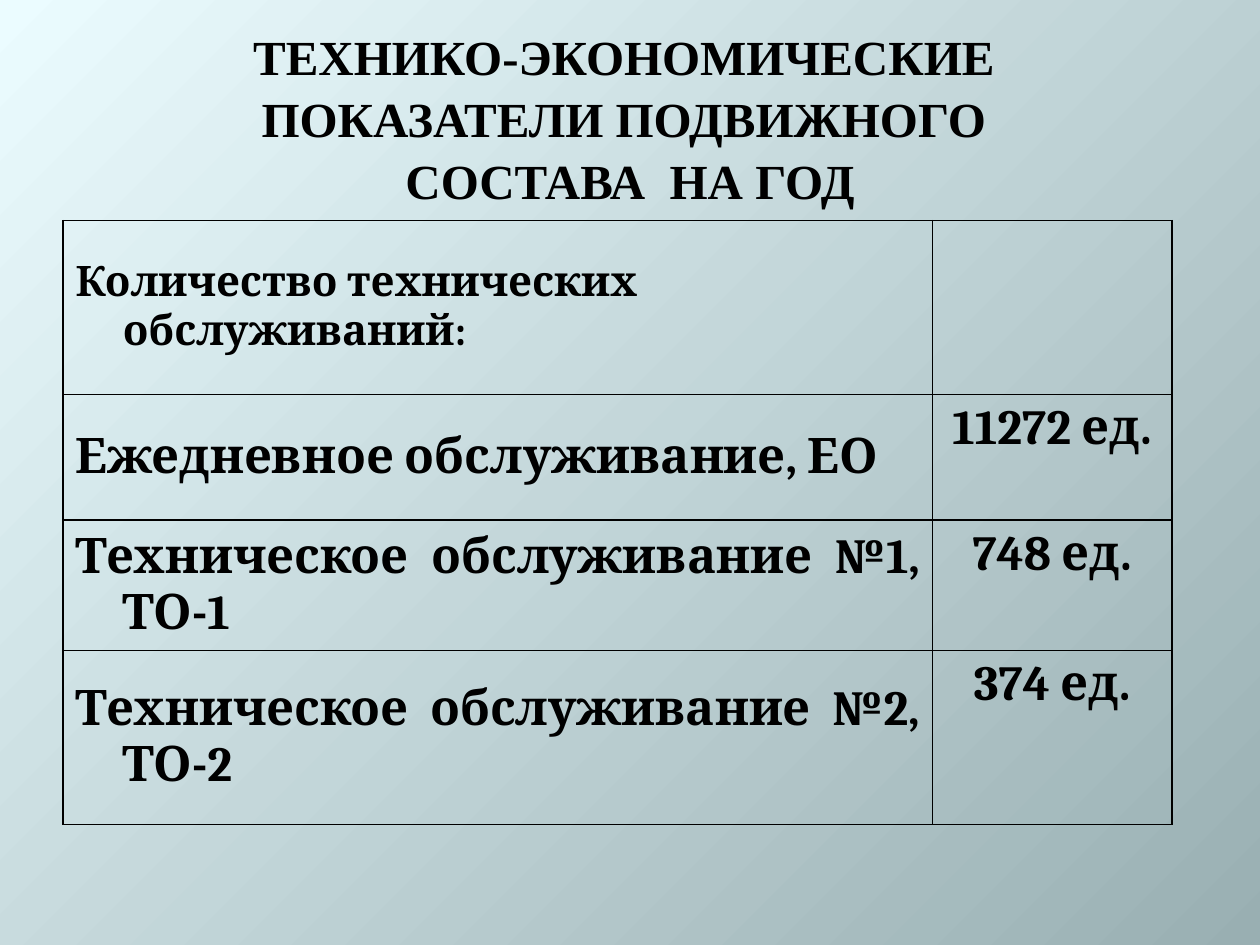
from dataclasses import dataclass

from lxml.etree import SubElement
from pptx import Presentation
from pptx.dml.color import RGBColor
from pptx.enum.text import MSO_ANCHOR, PP_ALIGN
from pptx.oxml.ns import qn
from pptx.util import Pt


@dataclass(frozen=True)
class Theme:
    light: str = "EBFCFF"
    dark: str = "99AFB2"
    ink: str = "000000"
    title_font: str = "Times New Roman"
    table_font: str = "Cambria"
    large: int = 28
    small: int = 24
    border: int = 1
    indent: int = 27


THEME = Theme()


def write_text(tf, text, font=THEME.table_font, size=THEME.large,
               align=PP_ALIGN.LEFT, hanging=0, line_spacing=None):
    """Write one bold paragraph; a vertical tab gives a line break."""
    p = tf.paragraphs[0]
    p.text = text
    p.alignment = align
    p.line_spacing = line_spacing
    if hanging:
        pPr = p._p.get_or_add_pPr()
        pPr.set("marL", str(Pt(hanging)))
        pPr.set("indent", str(-Pt(hanging)))
    for r in p.runs:
        r.font.name = font
        r.font.size = Pt(size)
        r.font.bold = True
        r.font.color.rgb = RGBColor.from_string(THEME.ink)


def set_borders(cell):
    tcPr = cell._tc.get_or_add_tcPr()
    for i, side in enumerate(("lnL", "lnR", "lnT", "lnB")):
        ln = SubElement(tcPr, qn(f"a:{side}"), w=str(Pt(THEME.border)))
        fill = SubElement(ln, qn("a:solidFill"))
        SubElement(fill, qn("a:srgbClr"), val=THEME.ink)
        tcPr.insert(i, ln)


def paint_background(s):
    fill = s.background.fill
    fill.gradient()
    fill.gradient_angle = 315
    for stop, color in zip(fill.gradient_stops, (THEME.light, THEME.dark)):
        stop.color.rgb = RGBColor.from_string(color)


def add_title(s, left, top, width, height):
    tf = s.shapes.add_textbox(Pt(left), Pt(top), Pt(width), Pt(height)).text_frame
    tf.word_wrap = True
    tf.vertical_anchor = MSO_ANCHOR.MIDDLE
    lines = ("ТЕХНИКО-ЭКОНОМИЧЕСКИЕ ", "ПОКАЗАТЕЛИ ПОДВИЖНОГО ", "СОСТАВА  НА ГОД")
    write_text(tf, "\v".join(lines), font=THEME.title_font,
               align=PP_ALIGN.CENTER, line_spacing=1.05)


def add_service_table(s, left, top, width, height):
    # Label, value, share of the height
    rows = (
        ("Количество технических обслуживаний:", "", 0.29),
        ("Ежедневное обслуживание, ЕО", "11272 ед.", 0.21),
        ("Техническое обслуживание №1, ТО-1", "748 ед.", 0.21),
        ("Техническое обслуживание №2, ТО-2", "374 ед.", 0.29),
    )
    value_width = 136.8
    table = s.shapes.add_table(len(rows), 2, Pt(left), Pt(top),
                               Pt(width), Pt(height)).table
    table.first_row = table.horz_banding = False
    table.columns[0].width = Pt(width - value_width)
    table.columns[1].width = Pt(value_width)

    for i, (label, value, share) in enumerate(rows):
        table.rows[i].height = Pt(height * share)
        label_cell, value_cell = table.cell(i, 0), table.cell(i, 1)
        for cell in (label_cell, value_cell):
            cell.fill.background()
            set_borders(cell)
        label_cell.vertical_anchor = MSO_ANCHOR.MIDDLE
        heading = i == 0
        write_text(label_cell.text_frame, label, hanging=THEME.indent,
                   size=THEME.small if heading else THEME.large,
                   align=PP_ALIGN.LEFT if heading else PP_ALIGN.JUSTIFY)
        if value:
            write_text(value_cell.text_frame, value, align=PP_ALIGN.CENTER)


def main():
    prs = Presentation()
    prs.slide_width, prs.slide_height = Pt(720), Pt(540)
    s = prs.slides.add_slide(prs.slide_layouts[6])
    paint_background(s)
    add_title(s, 36, 21.6, 648, 90)
    add_service_table(s, 36, 126, 633.6, 342.6)
    prs.save("out.pptx")


if __name__ == "__main__":
    main()
